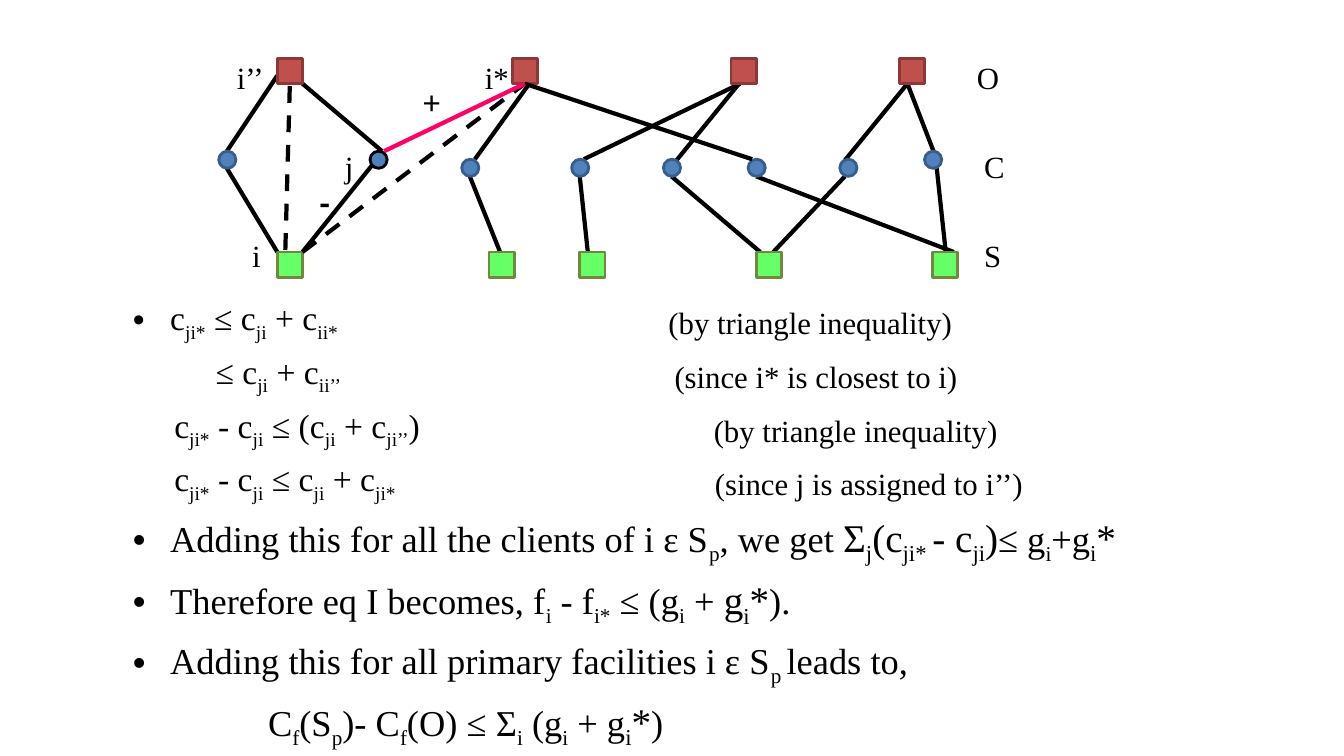
from dataclasses import dataclass

from lxml import etree
from pptx import Presentation
from pptx import util as u
from pptx.dml.color import RGBColor
from pptx.enum import dml, shapes, text
from pptx.oxml import ns


@dataclass(frozen=True)
class Theme:
    ink: str = "000000"
    pink: str = "FF0066"
    red: str = "C0504D"
    maroon: str = "8C3836"
    green: str = "66FF66"
    olive: str = "71893F"
    blue: str = "4F81BD"
    navy: str = "385D8A"
    serif: str = "Times New Roman"
    sans: str = "Calibri"
    note: int = 22
    math: int = 24
    body: int = 26
    big: int = 28
    thick: int = 3
    edge: int = 2


class Deck:
    """Draws styled elements on the current slide."""

    def __init__(self, theme):
        self.theme = theme
        self.prs = Presentation()
        self.prs.slide_width = u.Inches(13.33)
        self.prs.slide_height = u.Inches(7.5)
        self.slide = self.prs.slides.add_slide(self.prs.slide_layouts[6])

    def line(self, start, end, color=None, dash=False, top=None):
        pts = [u.Inches(v) for v in (*start, *end)]
        link = self.slide.shapes.add_connector(shapes.MSO_CONNECTOR.STRAIGHT, *pts)
        link.line.color.rgb = RGBColor.from_string(color or self.theme.ink)
        link.line.width = u.Pt(self.theme.thick)
        if dash:
            link.line.dash_style = dml.MSO_LINE.DASH
        if top is not None:
            link.end_connect(top, 2)
        etree.SubElement(link._element.spPr, ns.qn("a:effectLst"))

    def node(self, kind, left, top, size, fill, edge):
        box = [u.Inches(v) for v in (left, top, size, size)]
        node = self.slide.shapes.add_shape(kind, *box)
        node.shadow.inherit = False
        node.fill.solid()
        node.fill.fore_color.rgb = RGBColor.from_string(fill)
        node.line.color.rgb = RGBColor.from_string(edge)
        node.line.width = u.Pt(self.theme.edge)
        return node

    def square(self, left, top, fill, edge):
        return self.node(shapes.MSO_SHAPE.RECTANGLE, left, top, 0.25, fill, edge)

    def client(self, left, top, edge=None):
        kind = shapes.MSO_SHAPE.FLOWCHART_CONNECTOR
        self.node(kind, left, top, 0.17, self.theme.blue, edge or self.theme.navy)

    def run(self, para, words, size, font=None, bold=False, sub=False):
        run = para.add_run()
        run.text = words
        run.font.size = u.Pt(size)
        run.font.name = font or self.theme.serif
        run.font.color.rgb = RGBColor.from_string(self.theme.ink)
        if bold:
            run.font.bold = True
        if sub:
            run._r.get_or_add_rPr().set("baseline", "-25000")

    def label(self, words, left, top, width=0.4, size=None, font=None, bold=False):
        box = [u.Inches(v) for v in (left, top, width, 0.4)]
        frame = self.slide.shapes.add_textbox(*box).text_frame
        frame.word_wrap = True
        frame.margin_left = frame.margin_right = 0
        frame.margin_top = frame.margin_bottom = 0
        self.run(frame.paragraphs[0], words, size or self.theme.note, font, bold)

    def proof(self, rows, left, top, width, height):
        box = [u.Inches(v) for v in (left, top, width, height)]
        frame = self.slide.shapes.add_textbox(*box).text_frame
        frame.word_wrap = True
        frame.vertical_anchor = text.MSO_ANCHOR.TOP
        for i, (indent, space, parts) in enumerate(rows):
            para = frame.add_paragraph() if i else frame.paragraphs[0]
            para.space_before = u.Pt(space)
            props = para._p.get_or_add_pPr()
            props.set("marL", str(u.Inches(indent or 0.38)))
            props.set("indent", str(0 if indent else u.Inches(-0.37)))
            if not indent:
                font = etree.SubElement(props, ns.qn("a:buFont"))
                font.set("typeface", "Arial")
                etree.SubElement(props, ns.qn("a:buChar")).set("char", "•")
            for size, words in parts:
                for k, piece in enumerate(words.split("_")):
                    if piece:
                        self.run(para, piece, size, sub=k % 2 == 1)


def main():
    t = Theme()
    deck = Deck(t)
    math, body, big = t.math, t.body, t.big
    deck.proof([
        (0, 5.5, [(math, "c_ji*_ ≤ c_ji_ + c_ii*_")]),
        (0.83, 5.5, [(math, "≤ c_ji_ + c_ii’’_")]),
        (0.42, 5.5, [(math, "c_ji*_ - c_ji_ ≤ (c_ji_ + c_ji’’_)")]),
        (0.42, 5.5, [(math, "c_ji*_ - c_ji_ ≤ c_ji_ + c_ji*_")]),
        (0, 6.5, [(body, "Adding this for all the clients of i ε S_p_, we get "),
                  (big, "Σ_j_(c_ji* _- c_ji_)"), (body, "≤ g_i_+g"),
                  (big, "_i_*")]),
        (0, 6.5, [(body, "Therefore eq I becomes, f_i_ - f_i*_ ≤ (g_i_ + "),
                  (big, "g_i_*"), (body, ").")]),
        (0, 6.5, [(body, "Adding this for all primary facilities i ε S_p _leads to,")]),
        (1.35, 6.5, [(body, "C_f_(S_p_)- C_f_(O) ≤ Σ_i_ (g_i_ + g"),
                     (big, "_i_*"), (body, ")")]),
    ], 1.21, 2.9, 11.29, 4.32)

    reasons = [
        (6.63, "(by triangle inequality)"),
        (6.69, "(since i* is closest to i)"),
        (7.08, "(by triangle inequality)"),
        (7.09, "(since j is assigned to i’’)"),
    ]
    for i, (left, words) in enumerate(reasons):
        deck.label(words, left, 3.01 + 0.535 * i, 4)

    levels = [
        (0.58, [("i’’", 2.35), ("i*", 4.81), ("O", 9.69)]),
        (1.47, [("j", 3.42), ("C", 9.76)]),
        (2.35, [("i", 2.5), ("S", 9.76)]),
    ]
    for top, names in levels:
        for words, left in names:
            deck.label(words, left, top)

    low, high = 2.5, 0.83
    uppers = [
        (2.75, 0.75, 2.25, 1.5), (3, high, 3.79, 1.5), (9, high, 8.38, 1.59),
        (7.33, high, 6.71, 1.59), (5.25, high, 4.71, 1.58),
        (9, high, 9.29, 1.58), (7.34, high, 5.79, 1.58),
    ]
    lowers = [
        (3, low, 3.69, 1.64), (2.75, low, 2.25, 1.67), (4.96, low, 4.66, 1.75),
        (5.83, low, 5.75, 1.75), (9.38, low, 9.29, 1.66), (7.67, low, 8.38, 1.75),
        (9.46, low, 7.5, 1.75), (7.54, low, 6.66, 1.75),
    ]
    for x, y, cx, cy in uppers + lowers:
        deck.line((x, y), (cx, cy))

    for left in (2.75, 4.85, 5.75, 7.5, 9.25):
        deck.square(left, low, t.green, t.olive)
    for left in (4.58, 5.67, 6.58, 7.42, 8.33):
        deck.client(left, 1.58)
    for left, edge in ((2.17, t.navy), (3.67, t.ink), (9.17, t.navy)):
        deck.client(left, 1.5, edge)
    first, star, *rest = [
        deck.square(left, 0.58, t.red, t.maroon) for left in (2.75, 5.08, 7.25, 8.92)
    ]

    peak = (5.21, high)
    deck.line((7.46, 1.58), peak, top=star)
    deck.line((3, low), peak, dash=True, top=star)
    deck.line((2.83, 2.48), (2.87, high), dash=True, top=first)
    deck.line((3.81, 1.5), peak, t.pink, top=star)
    deck.label("+", 4.2, 0.8, size=math, font=t.sans)
    deck.label("-", 3.17, 1.8, size=math, font=t.sans, bold=True)
    deck.prs.save("out.pptx")


if __name__ == "__main__":
    main()
